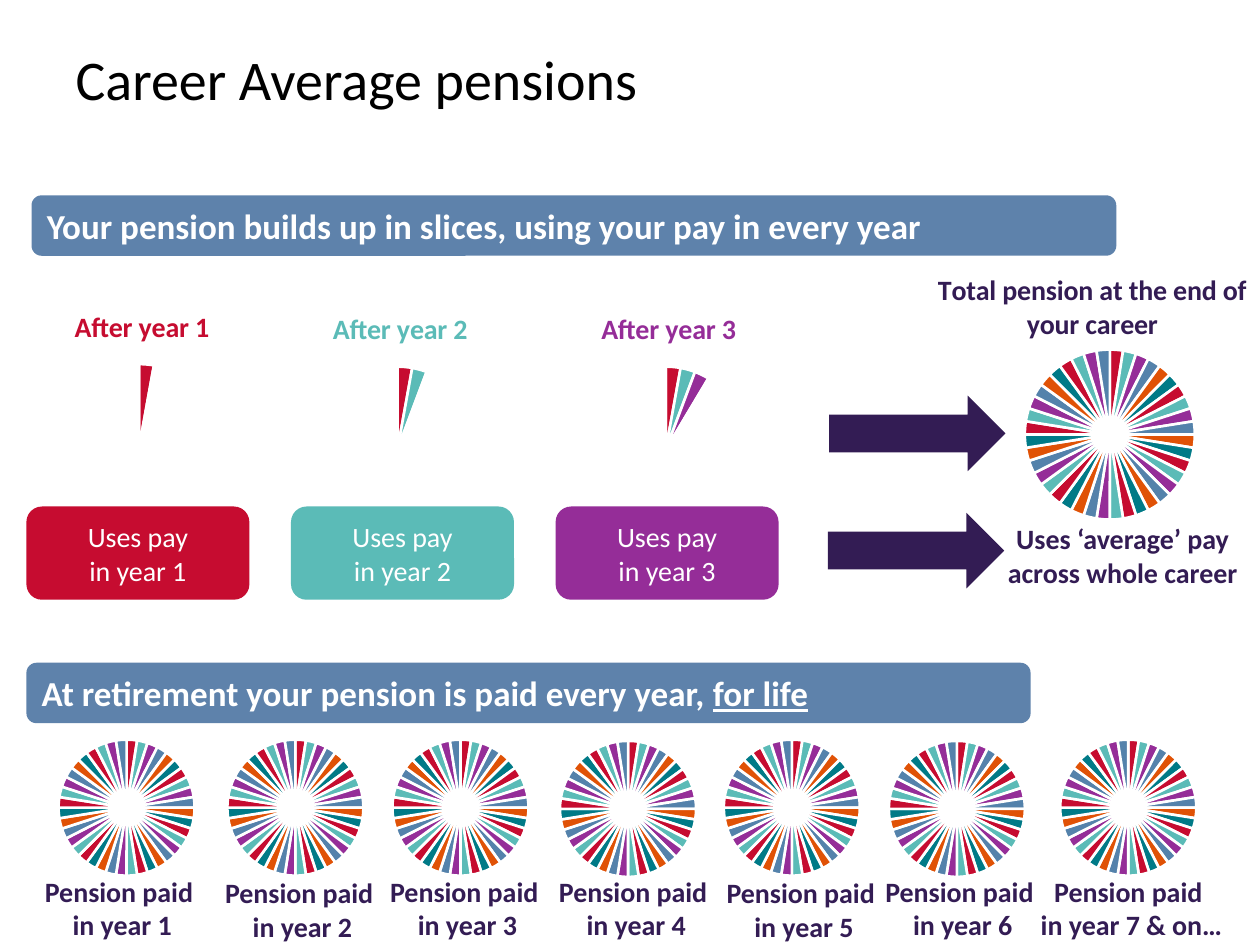
from itertools import cycle, islice

from pptx import Presentation
from pptx.chart.data import CategoryChartData
from pptx.dml.color import RGBColor
from pptx.enum.chart import XL_CHART_TYPE as ChartType
from pptx.enum.shapes import MSO_SHAPE as Shape
from pptx.enum.text import MSO_ANCHOR as Anchor, PP_ALIGN as Align
from pptx.oxml import parse_xml
from pptx.oxml.ns import nsdecls, qn
from pptx.util import Inches, Pt

RED, TEAL, PURPLE = "C60C30", "5BBBB7", "952D98"
WHEEL = [RED, TEAL, PURPLE, "5482AB", "E05206", "007A87"]
BANNER, DARK, WHITE, BLACK = "5E82AB", "331C54", "FFFFFF", "000000"


def color(value):
    return RGBColor.from_string(value)


def set_layout(parent, index, target="", **fractions):
    old = parent.find(qn("c:layout"))
    if old is not None:
        parent.remove(old)
    modes = "".join(f'<c:{key}Mode val="edge"/>' for key in "xy")
    sizes = "".join(f'<c:{key} val="{value:.3f}"/>' for key, value in fractions.items())
    parent.insert(index, parse_xml(
        f'<c:layout {nsdecls("c")}><c:manualLayout>{target}{modes}{sizes}'
        '</c:manualLayout></c:layout>'))


class PensionSlide:
    font = "Calibri"

    def __init__(self, deck):
        self.page = deck.slides.add_slide(deck.slide_layouts[5])

    def span(self, para, text, size, shade, bold=False, underline=None):
        span = para.add_run()
        span.text = text
        span.font.name = self.font
        span.font.size = Pt(size)
        span.font.bold = bold
        span.font.underline = underline
        span.font.color.rgb = color(shade)

    def title(self, text, left, top, width, height):
        box = self.page.shapes.title
        box.left, box.top = Inches(left), Inches(top)
        box.width, box.height = Inches(width), Inches(height)
        box.text_frame.vertical_anchor = Anchor.TOP
        para = box.text_frame.paragraphs[0]
        para.alignment = Align.LEFT
        self.span(para, text, 32, BLACK)

    def shape(self, kind, left, top, width, height, fill):
        shape = self.page.shapes.add_shape(
            kind, Inches(left), Inches(top), Inches(width), Inches(height))
        shape.shadow.inherit = False
        shape.fill.solid()
        shape.fill.fore_color.rgb = color(fill)
        shape.line.fill.background()
        return shape

    def arrow(self, left, top):
        self.shape(Shape.RIGHT_ARROW, left, top, 1.4, 0.6, DARK)

    def banner(self, left, top, width, text, underlined=""):
        box = self.shape(Shape.ROUNDED_RECTANGLE, left, top, width, 0.48, BANNER)
        frame = box.text_frame
        frame.vertical_anchor = Anchor.MIDDLE
        para = frame.paragraphs[0]
        para.alignment = Align.LEFT
        self.span(para, text, 20, WHITE, bold=True)
        if underlined:
            self.span(para, underlined, 20, WHITE, bold=True, underline=True)

    def button(self, left, top, lines, fill):
        box = self.shape(Shape.ROUNDED_RECTANGLE, left, top, 1.77, 0.74, fill)
        frame = box.text_frame
        frame.vertical_anchor = Anchor.MIDDLE
        for index, line in enumerate(lines):
            para = frame.add_paragraph() if index else frame.paragraphs[0]
            para.alignment = Align.CENTER
            self.span(para, line, 16, WHITE)

    def label(self, left, top, width, height, lines):
        box = self.page.shapes.add_textbox(
            Inches(left), Inches(top), Inches(width), Inches(height))
        frame = box.text_frame
        frame.word_wrap = True
        frame.vertical_anchor = Anchor.MIDDLE
        para = frame.paragraphs[0]
        para.alignment = Align.CENTER
        for index, line in enumerate(lines):
            if index:
                para.add_line_break()
            self.span(para, line, 16, DARK, bold=True)

    def pie(self, left, top, width, height, shades, value, diameter, middle):
        data = CategoryChartData()
        data.categories = [str(n + 1) for n in range(len(shades))]
        data.add_series("Series 1", [value] * len(shades))
        chart = self.page.shapes.add_chart(
            ChartType.PIE, Inches(left), Inches(top),
            Inches(width), Inches(height), data).chart
        chart.has_title = False
        chart.has_legend = False
        chart.font.name = self.font
        chart.font.size = Pt(10)
        chart.font.color.rgb = color(BLACK)
        plot = chart.plots[0]
        plot.vary_by_categories = True
        for index, shade in enumerate(shades):
            style = plot.series[0].points[index].format
            style.fill.solid()
            style.fill.fore_color.rgb = color(shade)
            style.line.color.rgb = color(WHITE)
            style.line.width = Pt(1.5)
        space = chart.element
        space.find(qn("c:txPr")).addprevious(parse_xml(
            f'<c:spPr {nsdecls("c", "a")}><a:noFill/><a:ln><a:noFill/></a:ln></c:spPr>'))
        set_layout(
            space.find(qn("c:chart")).find(qn("c:plotArea")), 0,
            '<c:layoutTarget val="inner"/>',
            x=(1 - diameter / width) / 2, y=(middle - diameter / 2) / height,
            w=diameter / width, h=diameter / height)
        return chart

    def pie_title(self, chart, lines, shade, x, y):
        chart.has_title = True
        title = chart.chart_title
        title.include_in_layout = False
        frame = title.text_frame
        for index, line in enumerate(lines):
            para = frame.add_paragraph() if index else frame.paragraphs[0]
            para.alignment = Align.CENTER
            self.span(para, line, 16, shade, bold=True)
        set_layout(title.element, 1, x=x, y=y)


def main():
    deck = Presentation()
    deck.slide_width, deck.slide_height = Inches(10), Inches(7.5)
    slide = PensionSlide(deck)
    slide.title("Career Average pensions", 0.5, 0.3, 9, 1.25)

    full_wheel = list(islice(cycle(WHEEL), 40))
    paid_years = [
        (-0.03, 5.72, -0.02, 7.05), (1.31, 5.72, 1.41, 7.06),
        (2.62, 5.72, 2.72, 7.05), (3.95, 5.73, 4.06, 7.05),
        (5.25, 5.72, 5.39, 7.06), (6.56, 5.73, 6.65, 7.05),
        (7.92, 5.72, 7.99, 7.05)]
    for left, top, _, _ in paid_years:
        slide.pie(left, top, 2.07, 1.38, full_wheel, 2, 1.08, 0.69)

    total = slide.pie(7.02, 1.89, 3.58, 2.39, full_wheel, 2, 1.35, 1.56)
    slide.pie_title(total, ["Total pension at the end of", "your career"], DARK, 0.11, 0.1)

    first_years = [RED, TEAL, PURPLE]
    for year, (left, top) in enumerate([(-0.52, 2.25), (1.53, 2.27), (3.66, 2.27)], 1):
        shades = first_years[:year] + [WHITE] * (35 - year)
        slices = slide.pie(left, top, 3.25, 2.17, shades, 3, 1.32, 1.3)
        slide.pie_title(slices, [f"After year {year}"], first_years[year - 1], 0.33, 0.07)

    for index, shade in enumerate(first_years):
        slide.button(0.21 + 2.1 * index, 4.02, ["Uses pay", f"in year {index + 1}"], shade)

    slide.banner(0.25, 1.55, 8.61,
                 "Your pension builds up in slices, using your pay in every year")
    slide.banner(0.21, 5.26, 7.97,
                 "At retirement your pension is paid every year, ", "for life")
    slide.arrow(6.58, 3.14)
    slide.arrow(6.57, 4.07)
    slide.label(7.89, 4.15, 2.04, 0.51, ["Uses ‘average’ pay across whole career"])
    for year, (_, _, left, top) in enumerate(paid_years, 1):
        ending = " & on…" if year == len(paid_years) else ""
        slide.label(left, top, 1.98, 0.31, ["Pension paid ", f"in year {year}{ending}"])

    deck.save("out.pptx")


if __name__ == "__main__":
    main()
